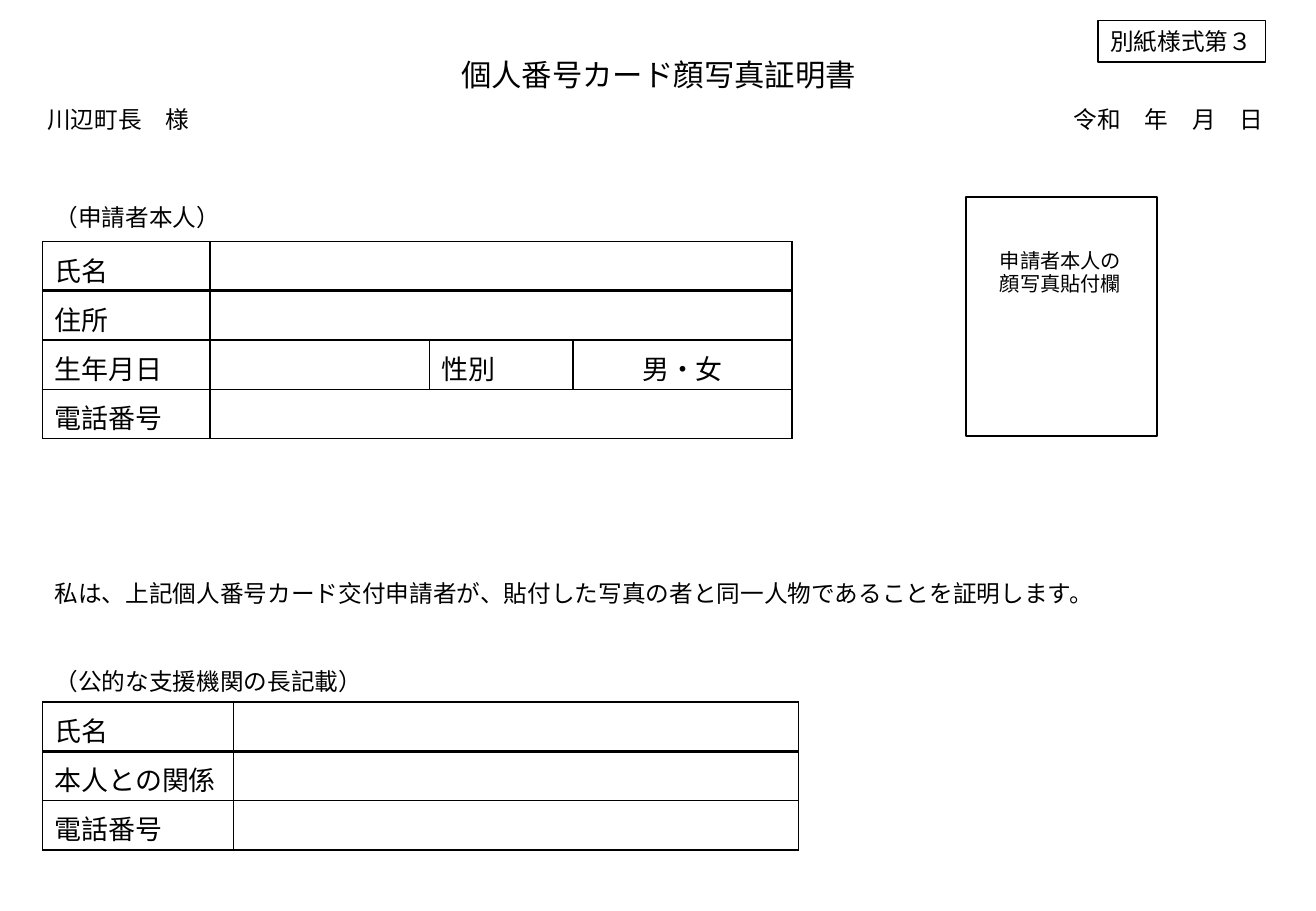
import pptx
import pptx.dml.color
import pptx.enum.shapes
import pptx.enum.text
import pptx.oxml
import pptx.oxml.ns
import pptx.util

BLACK = pptx.dml.color.RGBColor(0, 0, 0)
WHITE = pptx.dml.color.RGBColor(255, 255, 255)
FONT = "Noto Sans CJK JP"
LEFT = pptx.enum.text.PP_ALIGN.LEFT
CENTER = pptx.enum.text.PP_ALIGN.CENTER
MIDDLE = pptx.enum.text.MSO_ANCHOR.MIDDLE
RECTANGLE = pptx.enum.shapes.MSO_SHAPE.RECTANGLE

# The layout grid has 100 columns and 100 rows; boxes are (x, y, width, height).
WIDTH, HEIGHT = pptx.util.Inches(10.83), pptx.util.Inches(7.5)
LINE_ROWS = 4.53
TABLE_ROWS = 5.41
LABEL_GAP = 4.73


def columns(count):
    return round(WIDTH * count / 100)


def rows(count):
    return round(HEIGHT * count / 100)


def place(box):
    x, y, w, h = box
    return columns(x), rows(y), columns(w), rows(h)


def write(tf, lines, size, align=LEFT, spacing=None):
    for i, line in enumerate(lines):
        p = tf.paragraphs[0] if i == 0 else tf.add_paragraph()
        p.alignment = align
        p.line_spacing = spacing
        r = p.add_run()
        r.text = line
        r.font.size = pptx.util.Pt(size)
        r.font.name = FONT
        r.font.color.rgb = BLACK
        ea = pptx.oxml.parse_xml(
            f'<a:ea {pptx.oxml.ns.nsdecls("a")} typeface="{FONT}"/>')
        r.font._element.append(ea)


def fit_text(sp, lines, size, align=LEFT, spacing=None):
    tf = sp.text_frame
    tf.word_wrap = True
    tf.vertical_anchor = MIDDLE
    if align == LEFT:
        tf.margin_right = 0
    write(tf, lines, size, align, spacing)


def add_text(s, box, lines, size=14, align=LEFT, spacing=None):
    fit_text(s.shapes.add_textbox(*place(box)), lines, size, align, spacing)


def add_frame(s, box, weight):
    sp = s.shapes.add_shape(RECTANGLE, *place(box))
    sp.shadow.inherit = False
    sp.fill.background()
    sp.line.color.rgb = BLACK
    sp.line.width = pptx.util.Pt(weight)
    return sp


def set_borders(cell, top, bottom):
    tcPr = cell._tc.get_or_add_tcPr()
    for side, weight in (("L", 1), ("R", 1), ("T", top), ("B", bottom)):
        tcPr.append(pptx.oxml.parse_xml(
            f'<a:ln{side} {pptx.oxml.ns.nsdecls("a")} w="{pptx.util.Pt(weight)}">'
            f'<a:solidFill><a:srgbClr val="{BLACK}"/></a:solidFill></a:ln{side}>'))


def add_form_table(s, x, y, widths, entries):
    """Rows with fewer entries than columns end in one merged blank cell."""
    box = (x, y, sum(widths), TABLE_ROWS * len(entries))
    graphic = s.shapes.add_table(len(entries), len(widths), *place(box))
    table = graphic.table
    table.first_row = table.horz_banding = False
    for column, width in zip(table.columns, widths):
        column.width = columns(width)
    for i, texts in enumerate(entries):
        table.rows[i].height = rows(TABLE_ROWS)
        for j in range(len(widths)):
            cell = table.cell(i, j)
            set_borders(cell, 2 if i == 1 else 1, 2 if i == 0 else 1)
            cell.fill.solid()
            cell.fill.fore_color.rgb = WHITE
            cell.vertical_anchor = MIDDLE
            cell.margin_bottom = 0
            if j < len(texts) and texts[j]:
                align = CENTER if j == 3 else LEFT
                write(cell.text_frame, [texts[j]], 16, align)
        if len(texts) < len(widths) and len(widths) > 2:
            table.cell(i, 1).merge(table.cell(i, len(widths) - 1))


def add_header(s, box):
    x, y, w, h = box
    form_number = add_frame(s, (x + w - 14.9, y, 12.74, LINE_ROWS), 0.75)
    fit_text(form_number, ["別紙様式第３"], 14)
    add_text(s, (33.7, y + 3.2, 32.69, 5.33), ["個人番号カード顔写真証明書"], 18, CENTER)
    base = y + h - LINE_ROWS
    add_text(s, (x, base, 32.69, LINE_ROWS), ["川辺町長　様"])
    add_text(s, (x + w - 17.64, base, 17.64, LINE_ROWS), ["令和　年　月　日"])


def add_labelled_form(s, x, y, label, widths, entries, gap):
    add_text(s, (x, y, sum(widths), LINE_ROWS), [label])
    add_form_table(s, x, y + gap, widths, entries)


def add_photo_frame(s, box):
    x, y, w, h = box
    add_text(s, (x + 1.66, y + LABEL_GAP + 0.2, 11.27, 6.67),
             ["申請者本人の", "顔写真貼付欄"], 12, spacing=pptx.util.Pt(14))
    add_frame(s, box, 1)


def main():
    prs = pptx.Presentation()
    prs.slide_width, prs.slide_height = WIDTH, HEIGHT
    s = prs.slides.add_slide(prs.slide_layouts[6])
    margin = 3.23
    add_header(s, (2.68, 2.27, 95.66, 13.06))
    add_labelled_form(
        s, margin, 21.6, "（申請者本人）", [12.74, 16.66, 10.91, 16.66],
        [["氏名"], ["住所"], ["生年月日", "", "性別", "男・女"], ["電話番号"]], 4.93)
    add_photo_frame(s, (73.41, 21.6, 14.5, 26.27))
    add_text(s, (margin, 62.8, 83.66, LINE_ROWS),
             ["私は、上記個人番号カード交付申請者が、貼付した写真の者と同一人物であることを証明します。"])
    add_labelled_form(
        s, margin, 72.53, "（公的な支援機関の長記載）", [14.5, 42.93],
        [["氏名"], ["本人との関係"], ["電話番号"]], LINE_ROWS)
    prs.save("out.pptx")


if __name__ == "__main__":
    main()
